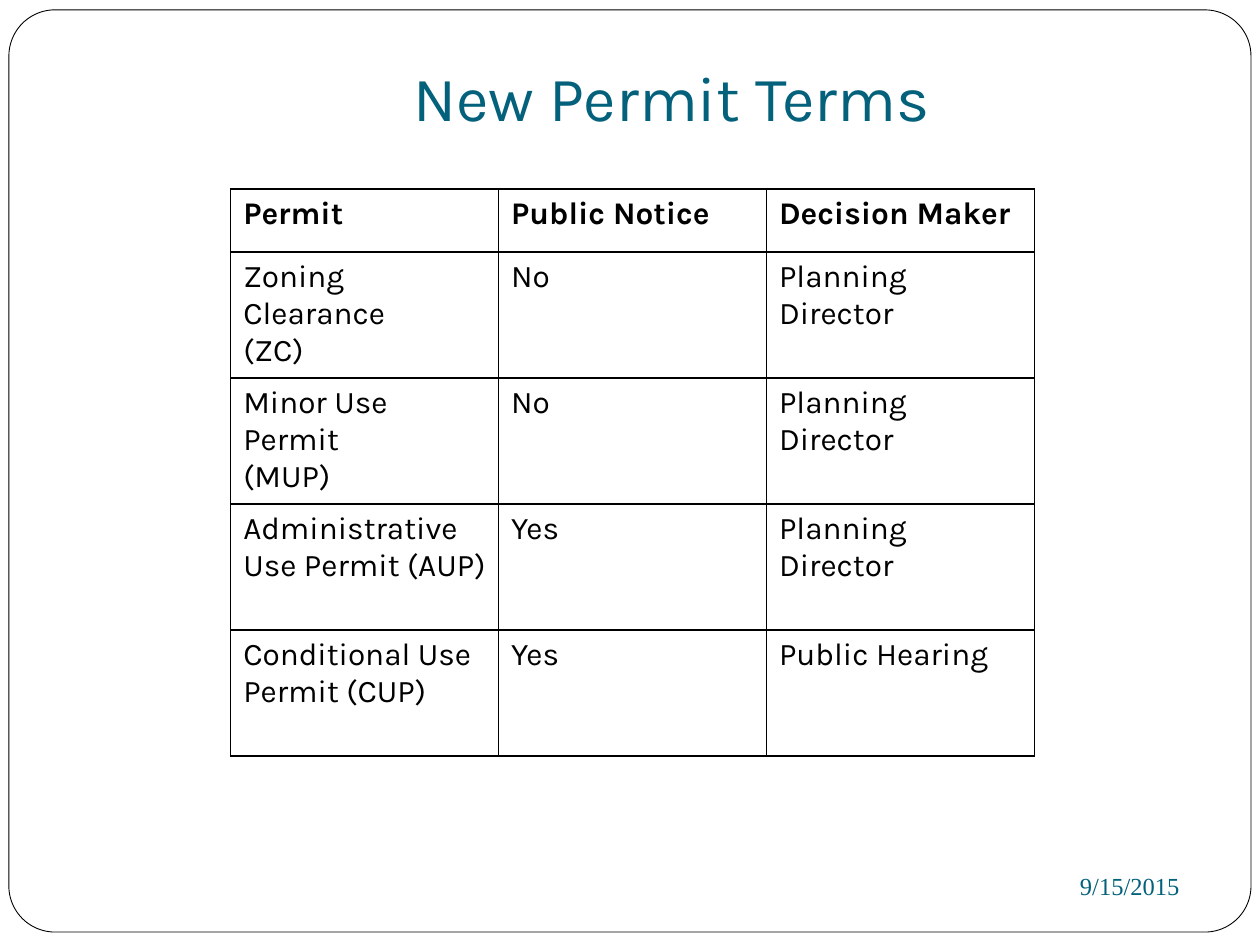
from dataclasses import dataclass

from lxml.etree import SubElement
from pptx import Presentation
from pptx.dml.color import RGBColor
from pptx.enum.shapes import MSO_SHAPE
from pptx.enum.text import MSO_ANCHOR, PP_ALIGN
from pptx.oxml.ns import qn
from pptx.util import Cm, Pt

# Content: a line break inside a cell starts a new paragraph
TITLE = "New Permit Terms"
DATE = "9/15/2015"
ROWS = [
    ("Permit", "Public Notice", "Decision Maker"),
    ("Zoning Clearance\n(ZC)", "No", "Planning Director"),
    ("Minor Use Permit\n(MUP)", "No", "Planning Director"),
    ("Administrative Use Permit (AUP)", "Yes", "Planning Director"),
    ("Conditional Use Permit (CUP)", "Yes", "Public Hearing"),
]


@dataclass(frozen=True)
class Theme:
    font: str = "Karla"
    date_font: str = "Times New Roman"
    accent: str = "04617B"
    ink: str = "000000"
    paper: str = "FFFFFF"
    title_size: int = 36
    table_size: int = 18
    date_size: int = 14
    frame_line: float = 0.5
    border: int = 1


T = Theme()


def rgb(value):
    return RGBColor.from_string(value)


def write(tf, text, font, size, color, bold=False, align=PP_ALIGN.LEFT):
    for i, line in enumerate(text.split("\n")):
        p = tf.add_paragraph() if i else tf.paragraphs[0]
        p.alignment = align
        r = p.add_run()
        r.text = line
        r.font.name, r.font.size, r.font.bold = font, Pt(size), bold
        r.font.color.rgb = rgb(color)


def set_borders(cell):
    tc_pr = cell._tc.get_or_add_tcPr()
    for i, side in enumerate(("lnL", "lnR", "lnT", "lnB")):
        ln = SubElement(tc_pr, qn(f"a:{side}"), w=str(Pt(T.border)))
        fill = SubElement(ln, qn("a:solidFill"))
        SubElement(fill, qn("a:srgbClr"), val=T.ink)
        tc_pr.insert(i, ln)  # borders come before the cell fill


prs = Presentation()
prs.slide_width, prs.slide_height = Cm(25.4), Cm(19.05)
s = prs.slides.add_slide(prs.slide_layouts[5])

# Title
title = s.shapes.title
title.left, title.top, title.width, title.height = Cm(2.74), Cm(0.84), Cm(21.59), Cm(2.11)
tf = title.text_frame
tf.vertical_anchor = MSO_ANCHOR.BOTTOM
tf.margin_bottom = Cm(0.25)
write(tf, TITLE, T.font, T.title_size, T.accent, align=PP_ALIGN.CENTER)

# Rounded page frame, behind the title
frame = s.shapes.add_shape(MSO_SHAPE.ROUNDED_RECTANGLE, Cm(0.18), Cm(0.2), Cm(25.04), Cm(18.59))
frame.adjustments[0] = 0.05
frame.shadow.inherit = False
frame.fill.solid()
frame.fill.fore_color.rgb = rgb(T.paper)
frame.line.color.rgb = rgb(T.ink)
frame.line.width = Pt(T.frame_line)
title.element.addprevious(frame.element)

# Permit table: equal columns, header row half as tall as the others
row_h = Cm(2.54)
table = s.shapes.add_table(len(ROWS), len(ROWS[0]), Cm(4.65), Cm(3.81),
                           Cm(16.2), Cm(11.43)).table
for i, row in enumerate(ROWS):
    table.rows[i].height = row_h if i else row_h // 2
    for j, text in enumerate(row):
        cell = table.cell(i, j)
        cell.fill.solid()
        cell.fill.fore_color.rgb = rgb(T.paper)
        set_borders(cell)
        write(cell.text_frame, text, T.font, T.table_size, T.ink, bold=i == 0)

# Date
tf = s.shapes.add_textbox(Cm(17.15), Cm(17.2), Cm(6.88), Cm(1.32)).text_frame
tf.word_wrap = True
tf.vertical_anchor = MSO_ANCHOR.MIDDLE
write(tf, DATE, T.date_font, T.date_size, T.accent, align=PP_ALIGN.RIGHT)

prs.save("out.pptx")
